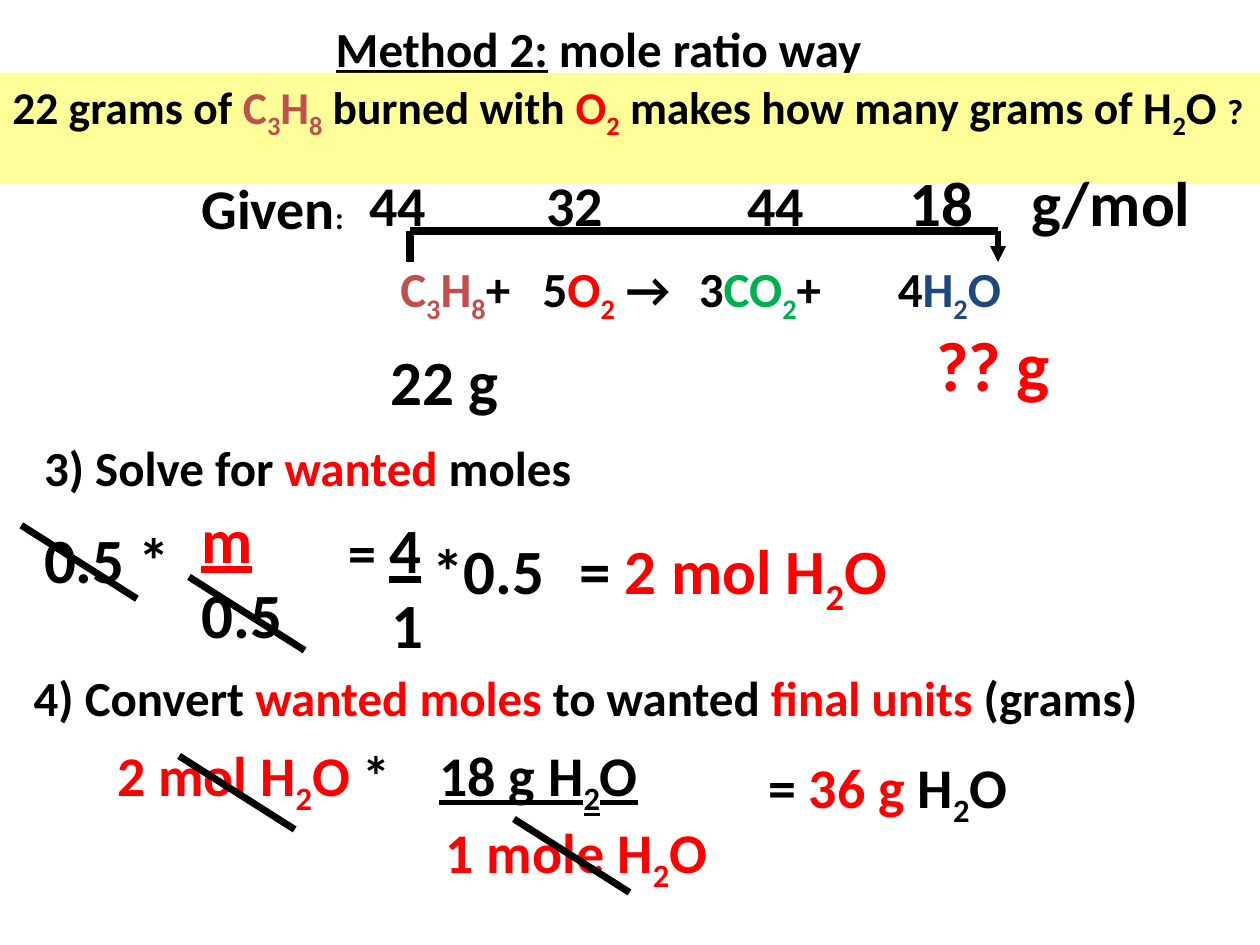
from dataclasses import dataclass
from itertools import groupby

from lxml.etree import SubElement
from pptx import Presentation
from pptx.dml.color import RGBColor
from pptx.enum.shapes import MSO_CONNECTOR, MSO_SHAPE
from pptx.enum.text import MSO_ANCHOR, MSO_AUTO_SIZE, PP_ALIGN
from pptx.oxml.ns import qn
from pptx.util import Cm, Pt


@dataclass(frozen=True)
class Theme:
    font: str = "Calibri"
    ink: str = "000000"
    wanted: str = "FF0000"
    fuel: str = "C0504D"
    carbon: str = "00B050"
    water: str = "1F497D"
    band: str = "FFFF99"
    note: int = 18
    mark: int = 20
    question: int = 26
    heading: int = 28
    working: int = 32
    large: int = 36
    unknown: int = 40


THEME = Theme()


@dataclass(frozen=True)
class Part:
    text: str
    color: str = THEME.ink
    size: int | None = None
    underline: bool = False
    subscript: bool = False


def red(text):
    return Part(text, THEME.wanted)


def formula(symbols, color=THEME.ink, underline=False):
    return [
        Part("".join(group), color, underline=underline, subscript=is_digit)
        for is_digit, group in groupby(symbols, str.isdigit)
    ]


class SlideBuilder:
    def __init__(self, slide, theme):
        self.slide = slide
        self.theme = theme

    def fill_paragraph(self, paragraph, parts, size, tabs=(), indent=0):
        properties = paragraph._p.get_or_add_pPr()
        if indent:
            properties.set("marL", str(Cm(indent)))
            properties.set("indent", "0")
        if tabs:
            stops = SubElement(properties, qn("a:tabLst"))
            for position in tabs:
                SubElement(stops, qn("a:tab"), pos=str(Cm(position)), algn="l")
        paragraph.font.name = self.theme.font
        paragraph.font.size = Pt(size)
        paragraph.font.bold = True
        for part in parts:
            run = paragraph.add_run()
            run.text = part.text
            run.font.color.rgb = RGBColor.from_string(part.color)
            if part.size:
                run.font.size = Pt(part.size)
            if part.underline:
                run.font.underline = True
            if part.subscript:
                run._r.get_or_add_rPr().set("baseline", "-25000")

    def title(self, left, top, width, height, parts):
        heading = self.slide.shapes.title
        heading.left, heading.top = Cm(left), Cm(top)
        heading.width, heading.height = Cm(width), Cm(height)
        frame = heading.text_frame
        frame.vertical_anchor = MSO_ANCHOR.MIDDLE
        frame.paragraphs[0].alignment = PP_ALIGN.CENTER
        self.fill_paragraph(frame.paragraphs[0], parts, self.theme.heading)

    def band(self, top, width, height, parts):
        banner = self.slide.shapes.add_shape(
            MSO_SHAPE.RECTANGLE, Cm(0), Cm(top), Cm(width), Cm(height))
        banner.shadow.inherit = False
        banner.fill.solid()
        banner.fill.fore_color.rgb = RGBColor.from_string(self.theme.band)
        banner.line.fill.background()
        frame = banner.text_frame
        frame.word_wrap = True
        frame.vertical_anchor = MSO_ANCHOR.TOP
        frame.paragraphs[0].alignment = PP_ALIGN.LEFT
        self.fill_paragraph(frame.paragraphs[0], parts, self.theme.question)

    def text(self, left, top, width, height, size, parts, below=(), tabs=(), indent=0):
        box = self.slide.shapes.add_textbox(Cm(left), Cm(top), Cm(width), Cm(height))
        frame = box.text_frame
        frame.word_wrap = True
        frame.auto_size = MSO_AUTO_SIZE.SHAPE_TO_FIT_TEXT
        self.fill_paragraph(frame.paragraphs[0], parts, size, tabs)
        if below:
            self.fill_paragraph(frame.add_paragraph(), below, size, indent=indent)

    def line(self, start, end, weight, arrow=False):
        connector = self.slide.shapes.add_connector(
            MSO_CONNECTOR.STRAIGHT, *map(Cm, start), *map(Cm, end))
        connector.line.color.rgb = RGBColor.from_string(self.theme.ink)
        connector.line.width = Pt(weight)
        if arrow:
            SubElement(connector.line._get_or_add_ln(), qn("a:tailEnd"), type="triangle")
        SubElement(connector._element.spPr, qn("a:effectLst"))

    def strike(self, left, top):
        self.line((left, top), (left + 2.33, top + 1.48), 4)


def add_question(page):
    page.title(0, -0.2, 24.13, 2.34, [
        Part("Method 2:", underline=True), Part(" mole ratio way")])
    page.band(1.47, 25.4, 2.24, [
        Part("22 grams of "), *formula("C3H8", THEME.fuel),
        Part(" burned with "), *formula("O2", THEME.wanted),
        Part(" makes how many grams of "), *formula("H2O"),
        Part(" "), Part("?", size=THEME.mark)])


def add_equation(page):
    page.text(7.82, 5.08, 16.71, 1.45, THEME.heading, [
        *formula("C3H8", THEME.fuel), Part("+\t5"),
        *formula("O2", THEME.wanted), Part(" →\t3"),
        *formula("CO2", THEME.carbon), Part("+\t4"),
        *formula("H2O", THEME.water)], tabs=(2.87, 6.02, 10.03))
    page.text(7.19, 3.18, 17.25, 1.8, THEME.working, [
        Part("44\t32\t44\t"), Part("18\tg/mol", size=THEME.large)],
        tabs=(3.57, 7.62, 10.9, 13.35))
    page.text(18.62, 6.35, 2.97, 1.96, THEME.unknown, [red("?? g")])
    page.text(3.81, 3.38, 3.38, 1.63, THEME.working, [
        Part("Given"), Part(":", size=THEME.note)])
    page.text(7.62, 6.78, 2.74, 1.8, THEME.large, [Part("22 g")])

    fuel_x, water_x, bar_y, foot_y = 8.26, 20.12, 4.65, 5.28
    page.line((fuel_x, foot_y), (fuel_x, bar_y), 4.5)
    page.line((fuel_x, bar_y), (water_x, bar_y), 4.5)
    page.line((water_x, bar_y), (water_x, foot_y), 3, arrow=True)


def add_wanted_moles(page):
    page.text(0.64, 8.69, 13.97, 1.45, THEME.heading, [
        Part("3) Solve for "), red("wanted "), Part("moles")])
    page.text(0.64, 10.36, 3.18, 1.8, THEME.large, [Part("0.5 *")])
    page.text(3.81, 9.96, 3.38, 3.33, THEME.large,
              [Part("m", THEME.wanted, underline=True)], below=[Part("0.5")])
    page.text(6.78, 10.16, 4.01, 3.33, THEME.large,
              [Part("= ", size=THEME.working), Part("4", underline=True)],
              below=[Part("1")], indent=0.86)
    page.text(8.46, 10.59, 3.18, 1.8, THEME.large, [Part("*0.5")])
    page.text(11.43, 10.59, 8.26, 1.8, THEME.large, [
        Part("= "), red("2 mol "), *formula("H2O", THEME.wanted)])
    page.strike(0.43, 10.59)
    page.strike(3.81, 11.63)


def add_final_units(page):
    page.text(0.43, 13.34, 23.93, 1.45, THEME.heading, [
        Part("4) Convert "), red("wanted moles "), Part("to wanted "),
        red("final units "), Part("(grams)")])
    page.text(2.11, 14.81, 13.34, 3, THEME.working, [
        red("2 mol "), *formula("H2O", THEME.wanted), Part(" *\t"),
        Part("18 g ", underline=True), *formula("H2O", underline=True)],
        below=[red("1 mole "), *formula("H2O", THEME.wanted)],
        tabs=(6.5,), indent=6.63)
    page.strike(3.61, 15.24)
    page.strike(10.36, 16.51)
    page.text(15.24, 15.04, 8.05, 1.63, THEME.working, [
        Part("= "), red("36 g "), *formula("H2O")])


def main():
    presentation = Presentation()
    presentation.slide_width, presentation.slide_height = Cm(25.4), Cm(19.05)
    title_only = presentation.slide_layouts[5]
    page = SlideBuilder(presentation.slides.add_slide(title_only), THEME)
    add_question(page)
    add_equation(page)
    add_wanted_moles(page)
    add_final_units(page)
    presentation.save("out.pptx")


if __name__ == "__main__":
    main()
